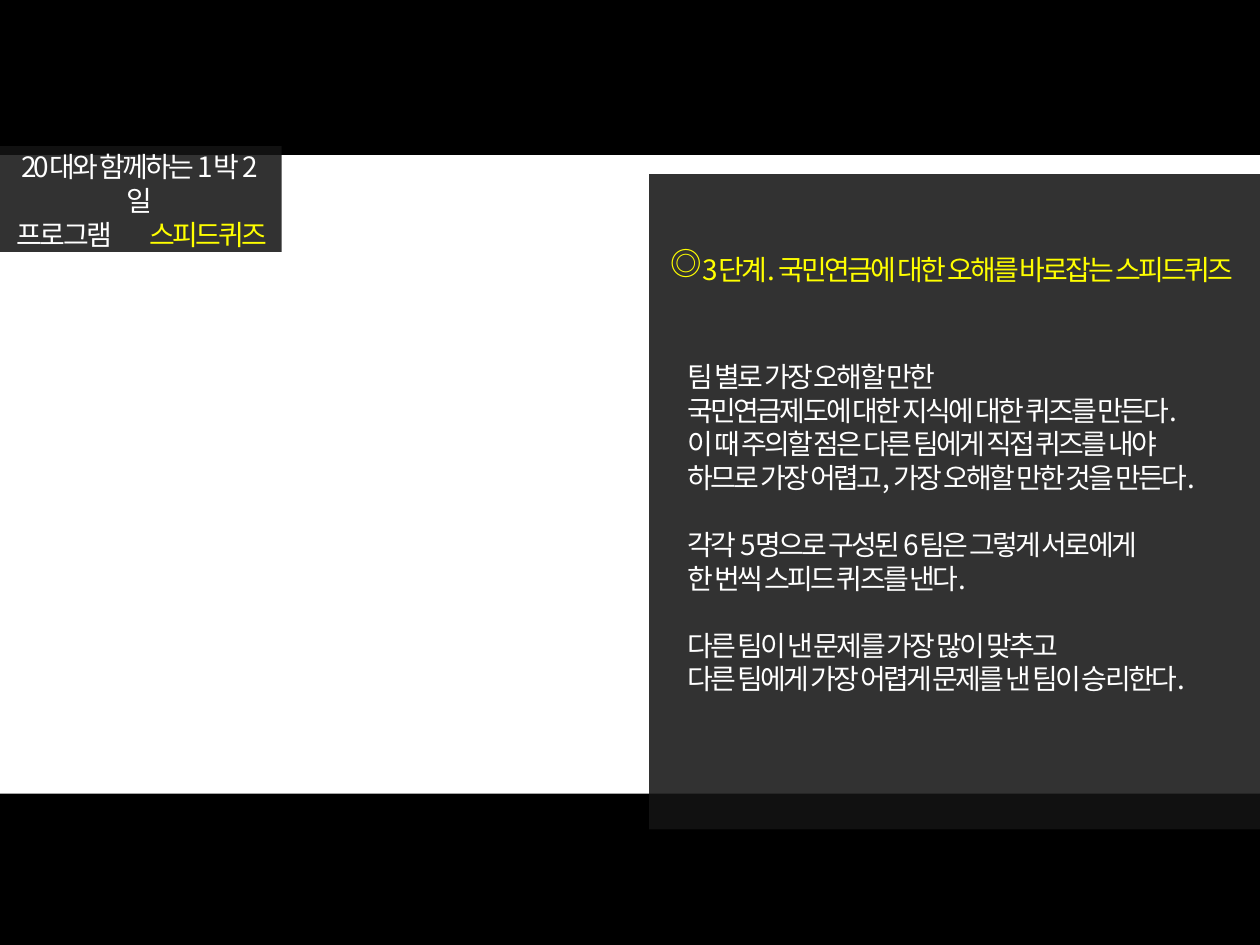
from pptx import Presentation
from pptx.dml.color import RGBColor as RGB
from pptx.enum.shapes import MSO_SHAPE as Kind
from pptx.enum.text import MSO_ANCHOR as Anchor, MSO_AUTO_SIZE as Auto, PP_ALIGN as Align
from pptx.oxml.ns import qn
from pptx.util import Pt
from lxml.etree import SubElement as Sub

BLACK = RGB(0, 0, 0)
SMOKE = RGB(0x14, 0x14, 0x14)
WHITE = RGB(255, 255, 255)
YELLOW = RGB(255, 255, 0)
FACE = "Noto Sans CJK KR"
PITCH = 1.2

BODY = [
    ["팀 별로 가장 오해할 만한",
     "국민연금제도에 대한 지식에 대한 퀴즈를 만든다.",
     "이 때 주의할 점은 다른 팀에게 직접 퀴즈를 내야",
     "하므로 가장 어렵고, 가장 오해할 만한 것을 만든다."],
    ["각각 5명으로 구성된 6팀은 그렇게 서로에게",
     "한 번씩 스피드 퀴즈를 낸다."],
    ["다른 팀이 낸 문제를 가장 많이 맞추고",
     "다른 팀에게 가장 어렵게 문제를 낸 팀이 승리한다."],
]


def set_all(item, form):
    """Set each named value on an object."""
    for name, value in form.items():
        setattr(item, name, value)


def add_rect(slide, box, color, alpha=None):
    """Add a borderless rectangle, see-through if alpha is given."""
    rect = slide.shapes.add_shape(Kind.RECTANGLE, *map(Pt, box))
    rect.shadow.inherit = False
    rect.line.fill.background()
    rect.fill.solid()
    rect.fill.fore_color.rgb = color
    if alpha:
        tint = rect.fill._xPr.find(".//" + qn("a:srgbClr"))
        Sub(tint, qn("a:alpha"), val=str(alpha * 1000))


def set_frame(shape, anchor=Anchor.MIDDLE):
    """Prepare a wrapping text frame and return it."""
    frame = shape.text_frame
    set_all(frame, {
        "word_wrap": True, "auto_size": Auto.NONE, "vertical_anchor": anchor,
        "margin_left": Pt(7.2), "margin_right": Pt(7.2),
        "margin_top": Pt(3.6), "margin_bottom": Pt(3.6)})
    return frame


def add_run(para, text, color, size=16, track=-150):
    """Add a styled run to a paragraph."""
    run = para.add_run()
    run.text = text
    set_all(run.font, {"size": Pt(size), "name": FACE})
    run.font.color.rgb = color
    props = run.font._element
    props.set("spc", str(track))
    Sub(props, qn("a:ea"), typeface=FACE)


def set_para(para, align, size=16, before=0):
    """Set the alignment and spacing of a paragraph."""
    set_all(para, {"alignment": align, "line_spacing": Pt(size * PITCH),
                   "space_before": Pt(before)})


def add_tabs(para, stops):
    """Add left tab stops to a paragraph."""
    tabs = Sub(para._p.get_or_add_pPr(), qn("a:tabLst"))
    for stop in stops:
        Sub(tabs, qn("a:tab"), pos=str(Pt(stop)), algn="l")


def add_title(slide):
    """Fill the title and bring it to the front."""
    title = slide.shapes.title
    box = map(Pt, (-2, 91.5, 163.5, 46))
    set_all(title, dict(zip(("left", "top", "width", "height"), box)))
    slide.shapes._spTree.append(title._element)
    frame = set_frame(title)
    para = frame.paragraphs[0]
    set_para(para, Align.CENTER)
    add_run(para, "20대와 함께하는 1박 2일", WHITE)
    para = frame.add_paragraph()
    add_tabs(para, (4.5, 80))
    set_para(para, Align.LEFT)
    add_run(para, "\t프로그램\t", WHITE)
    add_run(para, "스피드퀴즈", YELLOW)


def add_label(slide, box, text, **style):
    """Add a one-paragraph yellow text box."""
    label = slide.shapes.add_textbox(*map(Pt, box))
    para = set_frame(label, style.pop("anchor", Anchor.MIDDLE)).paragraphs[0]
    set_para(para, Align.LEFT, style.get("size", 16))
    add_run(para, text, YELLOW, **style)


def add_body(slide, box):
    """Add the rules of the quiz in spaced groups."""
    frame = set_frame(slide.shapes.add_textbox(*map(Pt, box)))
    para = frame.paragraphs[0]
    for part, group in enumerate(BODY):
        for row, text in enumerate(group):
            if part or row:
                para = frame.add_paragraph()
            gap = 16 * PITCH if part and not row else 0
            set_para(para, Align.JUSTIFY, before=gap)
            add_run(para, text, WHITE)


def main():
    """Build and save the slide."""
    deck = Presentation()
    set_all(deck, {"slide_width": Pt(720), "slide_height": Pt(540)})
    slide = deck.slides.add_slide(deck.slide_layouts[5])
    for top, high in ((0, 88.5), (453.5, 86.5)):
        add_rect(slide, (0, top, 720, high), BLACK)
    for box in ((0, 83.5, 161, 60.5), (371, 99.5, 349, 374.5)):
        add_rect(slide, box, SMOKE, 87)
    add_title(slide)
    add_label(slide, (394.5, 140.5, 325.5, 27), "3단계. 국민연금에 대한 오해를 바로잡는 스피드퀴즈")
    add_label(slide, (376, 136, 30, 29), "◎", size=18, track=0, anchor=Anchor.TOP)
    add_body(slide, (386, 201, 330, 201))
    deck.save("out.pptx")


if __name__ == "__main__":
    main()
